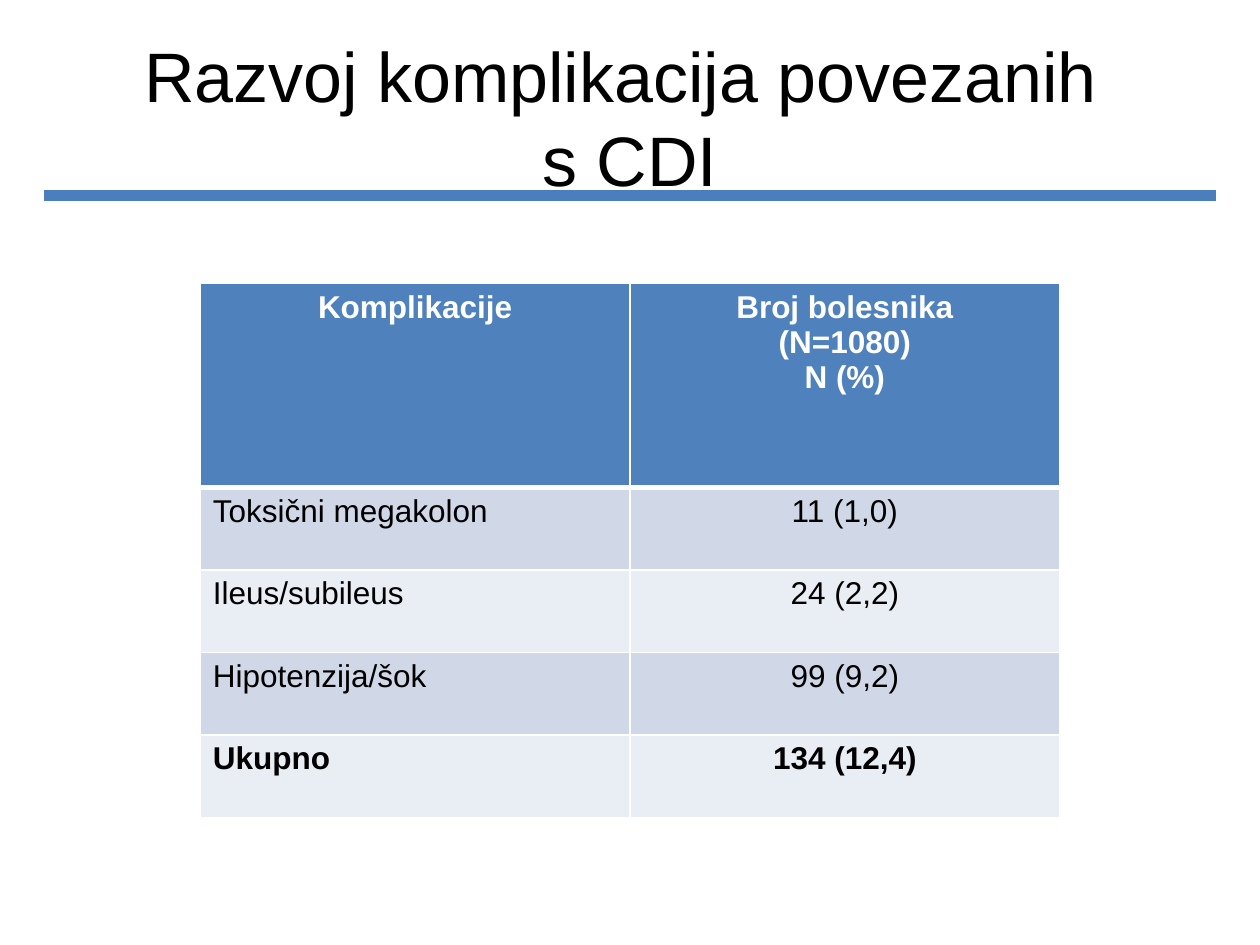
import pptx
import pptx.util
import pptx.dml.color
import pptx.enum.shapes
import pptx.enum.text
import pptx.oxml
import pptx.oxml.ns
from pptx.util import Inches

RGBColor = pptx.dml.color.RGBColor
BLACK = RGBColor(0x00, 0x00, 0x00)
WHITE = RGBColor(0xFF, 0xFF, 0xFF)
RULE = RGBColor(0x4B, 0x7E, 0xBC)
HEAD = RGBColor(0x4F, 0x81, 0xBD)
BANDS = RGBColor(0xD0, 0xD8, 0xE8), RGBColor(0xE9, 0xED, 0xF4)
ALIGN = pptx.enum.text.PP_ALIGN

ROWS = [
    ("Komplikacije", "Broj bolesnika\n(N=1080)\nN (%)"),
    ("Toksični megakolon", "11 (1,0)"),
    ("Ileus/subileus", "24 (2,2)"),
    ("Hipotenzija/šok", "99 (9,2)"),
    ("Ukupno", "134 (12,4)"),
]


def style(frame, size, color, align, bold=False):
    for para in frame.paragraphs:
        para.alignment = align
        for run in para.runs:
            run.font.name = "Arial"
            run.font.size = pptx.util.Pt(size)
            run.font.color.rgb = color
            run.font.bold = bold


def add_rule(slide):
    rule = slide.shapes.add_connector(
        pptx.enum.shapes.MSO_CONNECTOR.STRAIGHT,
        Inches(0.35), Inches(1.55), Inches(9.65), Inches(1.55))
    rule.line.color.rgb = RULE
    rule.line.width = pptx.util.Pt(6)
    props = rule._element.spPr
    props.append(props.makeelement(pptx.oxml.ns.qn("a:effectLst"), {}))


def set_title(slide, text):
    title = slide.shapes.title
    title.left, title.top = Inches(0.5), Inches(0.3)
    title.width, title.height = Inches(9), Inches(1.25)
    frame = title.text_frame
    frame.text = text
    frame.word_wrap = True
    frame.auto_size = pptx.enum.text.MSO_AUTO_SIZE.NONE
    frame.vertical_anchor = pptx.enum.text.MSO_ANCHOR.MIDDLE
    style(frame, 40, BLACK, ALIGN.CENTER)


def set_edges(cell, base):
    props = cell._tc.get_or_add_tcPr()
    widths = {"lnL": 1, "lnR": 1, "lnT": 1, "lnB": base}
    for spot, (tag, width) in enumerate(widths.items()):
        edge = pptx.oxml.parse_xml(
            f'<a:{tag} {pptx.oxml.ns.nsdecls("a")} w="{pptx.util.Pt(width)}">'
            f'<a:solidFill><a:srgbClr val="{WHITE}"/></a:solidFill></a:{tag}>')
        props.insert(spot, edge)


def add_grid(slide):
    grid = slide.shapes.add_table(
        len(ROWS), 2, Inches(1.59), Inches(2.25),
        Inches(6.82), Inches(4.24)).table
    for row, texts in enumerate(ROWS):
        top = row == 0
        grid.rows[row].height = Inches(1.62 if top else 0.655)
        for col, text in enumerate(texts):
            cell = grid.cell(row, col)
            cell.text_frame.text = text
            cell.fill.solid()
            cell.fill.fore_color.rgb = HEAD if top else BANDS[(row - 1) % 2]
            style(cell.text_frame, 18, WHITE if top else BLACK,
                  ALIGN.CENTER if top or col else ALIGN.LEFT,
                  row in (0, len(ROWS) - 1))
            set_edges(cell, 3 if top else 1)
            if row == 1:
                cell._tc.tcPr.find(pptx.oxml.ns.qn("a:lnT")).set(
                    "w", str(pptx.util.Pt(3)))


def main():
    deck = pptx.Presentation()
    deck.slide_width, deck.slide_height = Inches(10), Inches(7.5)
    slide = deck.slides.add_slide(deck.slide_layouts[5])
    add_rule(slide)
    set_title(slide, "Razvoj komplikacija povezanih \vs CDI")
    add_grid(slide)
    deck.save("out.pptx")


if __name__ == "__main__":
    main()
